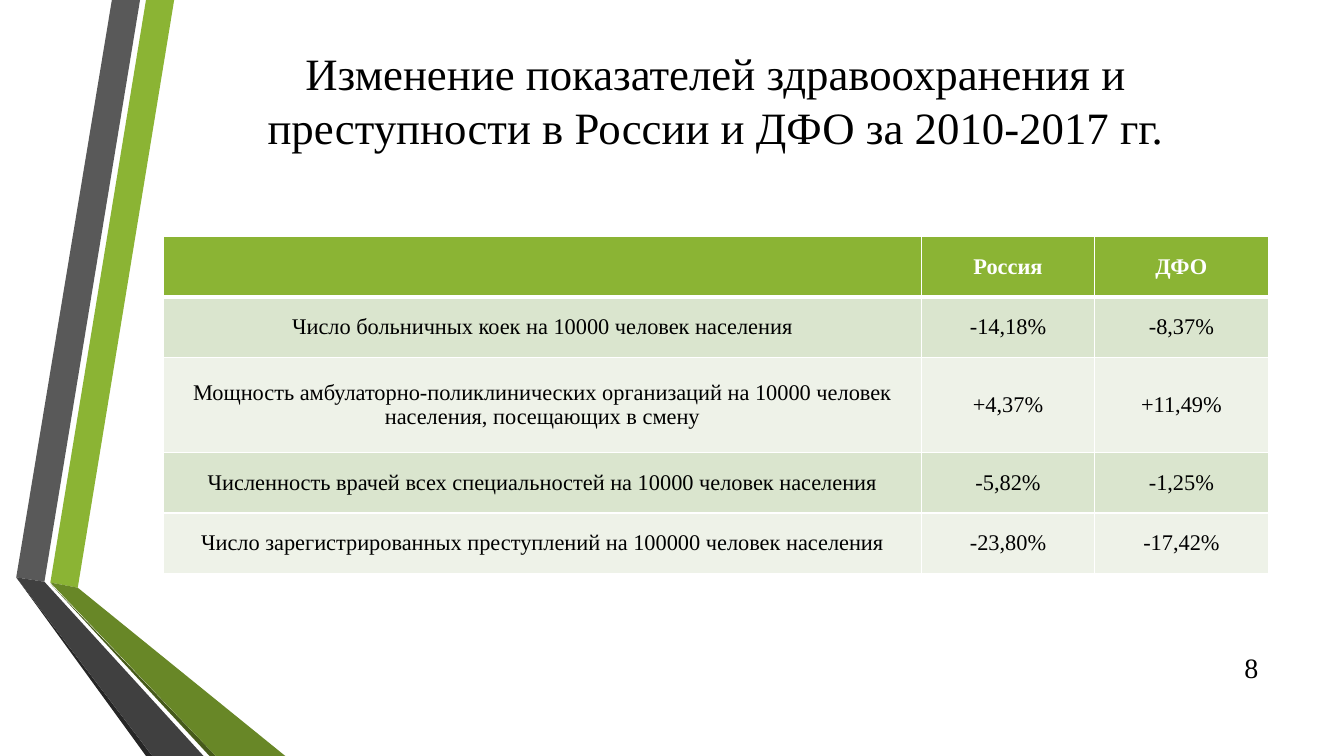
from lxml import etree
from pptx import Presentation
from pptx import util as u
from pptx.dml import color
from pptx.enum import text
from pptx.oxml import ns

FONT = "Times New Roman"
BLACK, WHITE, GREEN = "000000", "FFFFFF", "8BB434"
BAND_FILLS = ("DAE5CE", "EEF2E8")

# Corners in cm from the top left of the ribbon box, back to front
RIBBON_PARTS = (
    (GREEN, ((0.86, 14.68), (1.55, 14.81), (3.98, 0), (3.27, 0))),
    ("595959", ((3.12, 0), (2.41, 0), (0, 14.55), (0.71, 14.66))),
    ("262626", ((0, 14.55), (3.27, 19.05), (3.43, 19.05))),
    ("465A1A", ((0.86, 14.71), (4.87, 19.05), (5.03, 19.05))),
    ("688727", ((0.86, 14.68), (5.03, 19.05), (6.78, 19.05), (1.55, 14.81))),
    ("404040", ((0, 14.55), (3.43, 19.05), (4.72, 19.05), (0.71, 14.66))),
)

TABLE_ROWS = (
    ("", "Россия", "ДФО"),
    ("Число больничных коек на 10000 человек населения", "-14,18%", "-8,37%"),
    ("Мощность амбулаторно-поликлинических организаций на 10000 человек "
     "населения, посещающих в смену", "+4,37%", "+11,49%"),
    ("Численность врачей всех специальностей на 10000 человек населения",
     "-5,82%", "-1,25%"),
    ("Число зарегистрированных преступлений на 100000 человек населения",
     "-23,80%", "-17,42%"),
)
COLUMN_SHARES = (0.686, 0.157, 0.157)
ROW_SHARES = (0.18, 0.18, 0.28, 0.18, 0.18)


def rgb(value):
    return color.RGBColor.from_string(value)


def write_text(frame, content, size, hex_color, alignment, bold=False):
    frame.word_wrap = True
    paragraph = frame.paragraphs[0]
    paragraph.text = content
    paragraph.alignment = alignment
    paragraph.font.name = FONT
    paragraph.font.size = u.Pt(size)
    paragraph.font.bold = bold
    paragraph.font.color.rgb = rgb(hex_color)


def add_ribbons(slide, left, top):
    for fill, corners in RIBBON_PARTS:
        points = [(u.Cm(x), u.Cm(y)) for x, y in corners]
        builder = slide.shapes.build_freeform(*points[0])
        builder.add_line_segments(points[1:], close=True)
        shape = builder.convert_to_shape(left, top)
        shape.shadow.inherit = False
        shape.fill.solid()
        shape.fill.fore_color.rgb = rgb(fill)
        shape.line.fill.background()


def place_title(slide, left, top, width, height):
    title = slide.shapes.title
    title.left, title.top, title.width, title.height = left, top, width, height
    frame = title.text_frame
    frame.vertical_anchor = text.MSO_ANCHOR.MIDDLE
    write_text(frame, "Изменение показателей здравоохранения и преступности "
               "в России и ДФО за 2010-2017 гг.", 32, BLACK, text.PP_ALIGN.CENTER)


def set_borders(cell, bottom_width):
    """Draw white cell borders; the lines must come before the fill in the XML."""
    properties = cell._tc.get_or_add_tcPr()
    widths = {"a:lnL": 1, "a:lnR": 1, "a:lnT": 1, "a:lnB": bottom_width}
    for index, (tag, width) in enumerate(widths.items()):
        line = etree.Element(ns.qn(tag), w=str(u.Pt(width)))
        fill = etree.SubElement(line, ns.qn("a:solidFill"))
        etree.SubElement(fill, ns.qn("a:srgbClr"), val=WHITE)
        properties.insert(index, line)


def add_indicator_table(slide, left, top, width, height):
    table = slide.shapes.add_table(
        len(TABLE_ROWS), len(COLUMN_SHARES), left, top, width, height).table
    for column, share in zip(table.columns, COLUMN_SHARES):
        column.width = int(width * share)
    for row, share in zip(table.rows, ROW_SHARES):
        row.height = int(height * share)
    for row_index, values in enumerate(TABLE_ROWS):
        header = row_index == 0
        for column_index, value in enumerate(values):
            cell = table.cell(row_index, column_index)
            cell.vertical_anchor = text.MSO_ANCHOR.MIDDLE
            cell.fill.solid()
            cell.fill.fore_color.rgb = rgb(
                GREEN if header else BAND_FILLS[(row_index - 1) % 2])
            set_borders(cell, 3 if header else 1)
            write_text(cell.text_frame, value, 16, WHITE if header else BLACK,
                       text.PP_ALIGN.CENTER, bold=header)


def add_page_number(slide, left, top, width, height):
    frame = slide.shapes.add_textbox(left, top, width, height).text_frame
    frame.vertical_anchor = text.MSO_ANCHOR.MIDDLE
    write_text(frame, "8", 20, BLACK, text.PP_ALIGN.RIGHT)


def main():
    presentation = Presentation()
    presentation.slide_width = u.Cm(33.87)
    presentation.slide_height = u.Cm(19.05)
    slide = presentation.slides.add_slide(presentation.slide_layouts[5])
    left, width = u.Cm(4.12), u.Cm(27.84)
    add_ribbons(slide, u.Cm(0.41), 0)
    add_page_number(slide, u.Cm(30.43), u.Cm(16.31), u.Cm(1.53), u.Cm(1.02))
    place_title(slide, left, u.Cm(0.9), width, u.Cm(3.23))
    add_indicator_table(slide, left, u.Cm(5.95), width, u.Cm(8.51))
    presentation.save("out.pptx")


if __name__ == "__main__":
    main()
